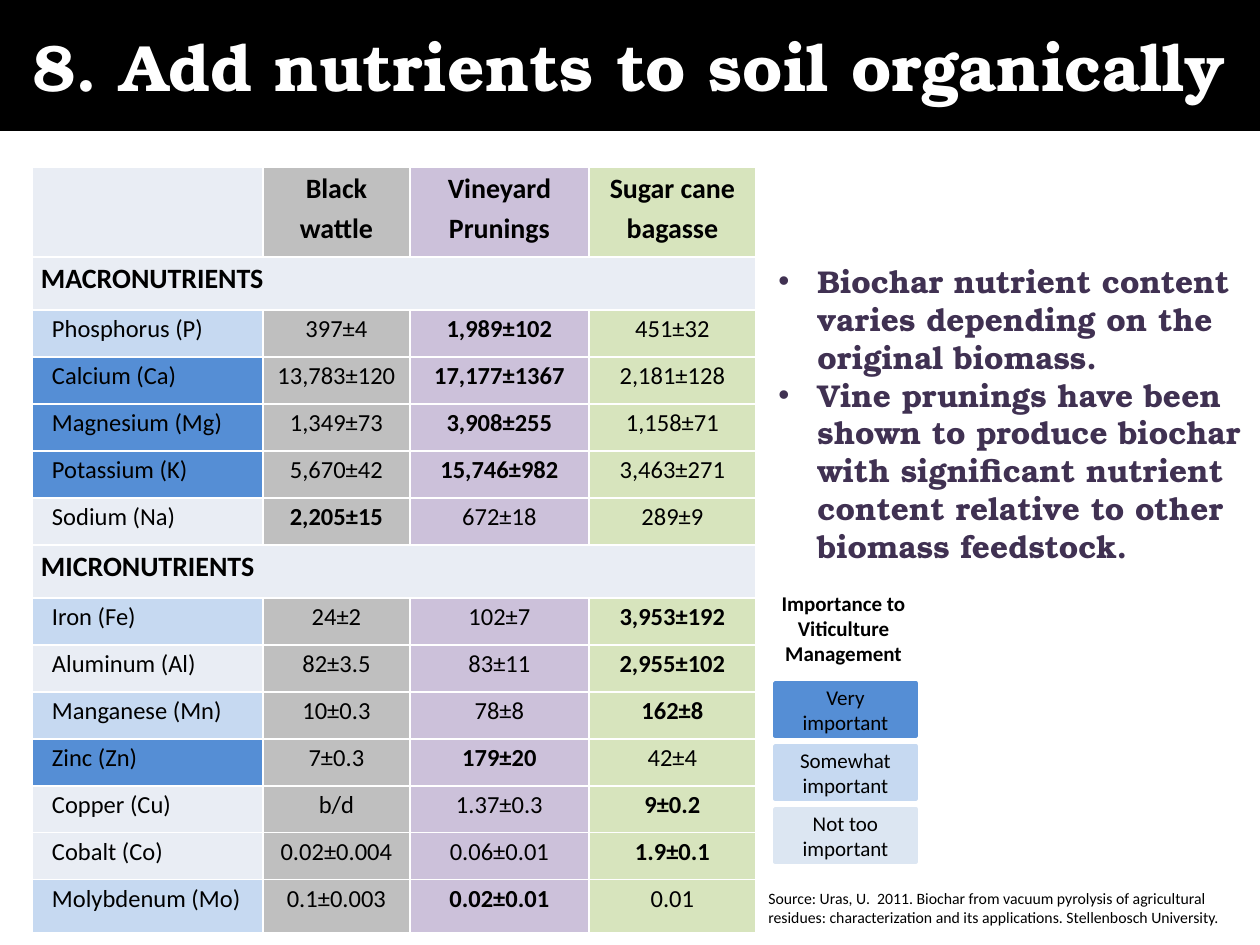
from lxml.etree import SubElement
from pptx import Presentation
from pptx.dml.color import RGBColor
from pptx.enum.shapes import MSO_SHAPE
from pptx.enum.text import MSO_ANCHOR, MSO_AUTO_SIZE, PP_ALIGN
from pptx.oxml.ns import qn
from pptx.util import Emu, Pt

SERIF, SANS = "TeX Gyre Bonum", "Calibri"
PALE = "E9EDF4"
IMPORTANCE = {"very": "558ED5", "some": "C6D9F1", "low": PALE}
COLUMN_FILLS = ["BFBFBF", "CCC1DA", "D7E4BD"]
COLUMN_WIDTHS = [231, 147, 179, 167]
HEADERS = [["Black wattle"], ["Vineyard", "Prunings"], ["Sugar cane bagasse"]]
NUTRIENTS = {
    "MACRONUTRIENTS": [
        ("Phosphorus (P)", "some", 1, ["397±4", "1,989±102", "451±32"]),
        ("Calcium (Ca)", "very", 1, ["13,783±120", "17,177±1367", "2,181±128"]),
        ("Magnesium (Mg)", "very", 1, ["1,349±73", "3,908±255", "1,158±71"]),
        ("Potassium (K)", "very", 1, ["5,670±42", "15,746±982", "3,463±271"]),
        ("Sodium (Na)", "low", 0, ["2,205±15", "672±18", "289±9"]),
    ],
    "MICRONUTRIENTS": [
        ("Iron (Fe)", "some", 2, ["24±2", "102±7", "3,953±192"]),
        ("Aluminum (Al)", "low", 2, ["82±3.5", "83±11", "2,955±102"]),
        ("Manganese (Mn)", "some", 2, ["10±0.3", "78±8", "162±8"]),
        ("Zinc (Zn)", "very", 1, ["7±0.3", "179±20", "42±4"]),
        ("Copper (Cu)", "low", 2, ["b/d", "1.37±0.3", "9±0.2"]),
        ("Cobalt (Co)", "low", 2, ["0.02±0.004", "0.06±0.01", "1.9±0.1"]),
        ("Molybdenum (Mo)", "some", 1, ["0.1±0.003", "0.02±0.01", "0.01"]),
    ],
}
LEGEND = [("Very important", "558ED5"), ("Somewhat important", "C6D9F1"),
          ("Not too important", "DCE6F2")]
POINTS = [
    "Biochar nutrient content varies depending on the original biomass.",
    "Vine prunings have been shown to produce biochar with significant "
    "nutrient content relative to other biomass feedstock.",
]
SOURCE = ("Source: Uras, U.  2011. Biochar from vacuum pyrolysis of agricultural "
          "residues: characterization and its applications. Stellenbosch University.")


def px(n):
    """Turn slide pixels into EMU."""
    return Emu(round(n * 914400 / 126))


def rgb(value):
    """Turn a hex string into a colour."""
    return RGBColor.from_string(value)


def paint(obj, color):
    """Give a shape or cell a solid fill."""
    obj.fill.solid()
    obj.fill.fore_color.rgb = rgb(color)


def add_bullet(p, indent):
    """Give a paragraph a hanging bullet."""
    pPr = p._p.get_or_add_pPr()
    pPr.set("marL", str(px(indent)))
    pPr.set("indent", str(-px(indent)))
    SubElement(pPr, qn("a:buFont"), typeface="Arial")
    SubElement(pPr, qn("a:buChar"), char="•")


def write(tf, lines, size=12, font=SANS, color="000000", bold=False,
          align=PP_ALIGN.LEFT, spacing=None, bullet=0):
    """Fill a text frame with one paragraph per line."""
    for i, line in enumerate(lines):
        p = tf.add_paragraph() if i else tf.paragraphs[0]
        if bullet:
            add_bullet(p, bullet)
        p.alignment = align
        if spacing:
            p.line_spacing = spacing
        r = p.add_run()
        r.text = line
        r.font.size, r.font.name, r.font.bold = Pt(size), font, bold
        r.font.color.rgb = rgb(color)


def add_text(s, box, lines, wrap=True, **fmt):
    """Add a text box that grows with its text."""
    sp = s.shapes.add_textbox(*map(px, box))
    tf = sp.text_frame
    tf.word_wrap = wrap
    tf.auto_size = MSO_AUTO_SIZE.SHAPE_TO_FIT_TEXT
    write(tf, lines, **fmt)
    return sp


def add_title(s, box, text):
    """Turn the title placeholder into a black banner."""
    sp = s.shapes.title
    sp.left, sp.top, sp.width, sp.height = map(px, box)
    paint(sp, "000000")
    tf = sp.text_frame
    tf.auto_size = MSO_AUTO_SIZE.NONE
    tf.vertical_anchor = MSO_ANCHOR.MIDDLE
    write(tf, [text], size=37.4, font=SERIF, color="FFFFFF", bold=True,
          align=PP_ALIGN.CENTER)


def fill_cell(cell, color, lines=(), indent=0, **fmt):
    """Paint one table cell and write its text."""
    paint(cell, color)
    cell.margin_left, cell.margin_right = px(9 + indent), px(9)
    cell.margin_top = cell.margin_bottom = 0
    write(cell.text_frame, lines, spacing=1.15, **fmt)


def add_nutrient_table(s, box):
    """Add the nutrient table with its two sections."""
    heights = [90]
    for items in NUTRIENTS.values():
        heights += [53] + [47] * len(items)
    heights[-1] = 53
    table = s.shapes.add_table(len(heights), 4, *map(px, box)).table
    table.first_row = table.horz_banding = False
    for column, width in zip(table.columns, COLUMN_WIDTHS):
        column.width = px(width)
    for row, height in zip(table.rows, heights):
        row.height = px(height)

    fill_cell(table.cell(0, 0), PALE)
    for c, (lines, color) in enumerate(zip(HEADERS, COLUMN_FILLS), 1):
        fill_cell(table.cell(0, c), color, lines, size=16, bold=True,
                  align=PP_ALIGN.CENTER)
    row = 1
    for section, items in NUTRIENTS.items():
        table.cell(row, 0).merge(table.cell(row, 3))
        fill_cell(table.cell(row, 0), PALE, [section], size=16, bold=True)
        for row, (name, level, top, values) in enumerate(items, row + 1):
            fill_cell(table.cell(row, 0), IMPORTANCE[level], [name], indent=11, size=14)
            for c, (value, color) in enumerate(zip(values, COLUMN_FILLS)):
                fill_cell(table.cell(row, c + 1), color, [value], size=14,
                          bold=c == top, align=PP_ALIGN.CENTER)
        row += 1


def add_legend(s, box):
    """Add the importance key: a heading over three swatches."""
    x, y, w, h = box
    add_text(s, (x, y, w, 89), ["Importance to", "Viticulture", "Management"],
             wrap=False, bold=True, align=PP_ALIGN.CENTER)
    swatch_h, pitch = 53, 63
    first = y + h - swatch_h - pitch * (len(LEGEND) - 1)
    for i, (label, color) in enumerate(LEGEND):
        sp = s.shapes.add_shape(MSO_SHAPE.RECTANGLE, px(x + 9), px(first + i * pitch),
                                px(w - 14), px(swatch_h))
        sp.shadow.inherit = False
        paint(sp, color)
        sp.line.color.rgb = rgb(color)
        sp.line.width = Pt(2)
        sp.text_frame.word_wrap = True
        sp.text_frame.vertical_anchor = MSO_ANCHOR.MIDDLE
        write(sp.text_frame, [label], align=PP_ALIGN.CENTER)


def add_points(s, box):
    """Add the bulleted findings on white."""
    sp = add_text(s, box, POINTS, size=18, font=SERIF, color="403152",
                  bold=True, bullet=39)
    paint(sp, "FFFFFF")


def main():
    """Build and save the slide."""
    prs = Presentation()
    prs.slide_width, prs.slide_height = px(1260), px(945)
    s = prs.slides.add_slide(prs.slide_layouts[5])
    add_title(s, (-3, 0, 1265, 131), "8. Add nutrients to soil organically")
    add_nutrient_table(s, (32, 167, 724, 766))
    add_points(s, (766, 256, 496, 318))
    add_text(s, (756, 883, 504, 50), [SOURCE], size=9)
    add_legend(s, (766, 584, 155, 278))
    prs.save("out.pptx")


if __name__ == "__main__":
    main()
